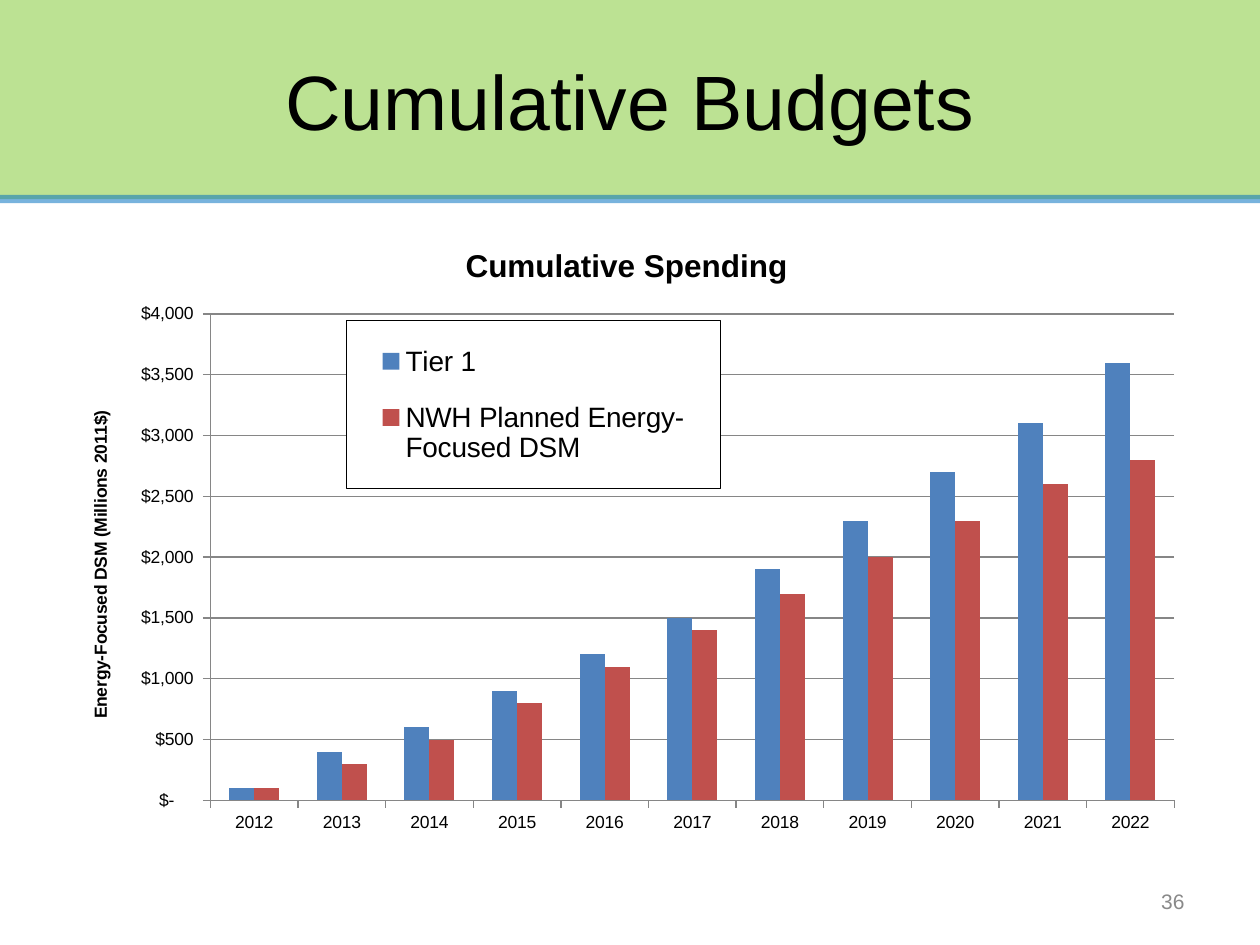
from lxml.etree import SubElement
from pptx import Presentation
from pptx.chart.data import CategoryChartData
from pptx.dml.color import RGBColor
from pptx.enum.chart import XL_CHART_TYPE as ChartType, XL_LEGEND_POSITION as LegendPosition
from pptx.enum.chart import XL_TICK_MARK as TickMark
from pptx.enum.shapes import MSO_CONNECTOR as Connector, MSO_SHAPE as Shape
from pptx.enum.text import MSO_ANCHOR as Anchor, PP_ALIGN as Align
from pptx.oxml import parse_xml
from pptx.oxml.ns import nsdecls, qn
from pptx.util import Inches, Pt

WIDTH, HEIGHT = 10, 7.5
BAND_HEIGHT = 1.58
TITLE = "Cumulative Budgets"
PAGE_NUMBER = "36"
CHART_TITLE = "Cumulative Spending"
AXIS_TITLE = "Energy-Focused DSM (Millions 2011$)"
MONEY = '_("$"* #,##0_);_("$"* \\(#,##0\\);_("$"* "-"??_);_(@_)'
YEARS = [str(year) for year in range(2012, 2023)]
SERIES = [
    ("Tier 1", "4F81BD",
     [100, 400, 600, 900, 1200, 1500, 1900, 2300, 2700, 3100, 3600]),
    ("NWH Planned Energy-Focused DSM", "C0504D",
     [100, 300, 500, 800, 1100, 1400, 1700, 2000, 2300, 2600, 2800]),
]


def color(value):
    return RGBColor.from_string(value)


def style(font, size, value="000000", bold=False):
    font.name = "Arial"
    font.size = Pt(size)
    font.bold = bold
    font.color.rgb = color(value)


def set_alpha(shape, percent):
    fill_color = next(shape._element.spPr.iter(qn("a:srgbClr")))
    SubElement(fill_color, qn("a:alpha"), val=str(percent * 1000))


def write(box, text, size, align, value="000000"):
    frame = box.text_frame
    frame.text = text
    frame.word_wrap = True
    frame.vertical_anchor = Anchor.MIDDLE
    para = frame.paragraphs[0]
    para.alignment = align
    style(para.runs[0].font, size, value)


def place(element, index, x, y, w=None, h=None, inner=False):
    for old in element.findall(qn("c:layout")):
        element.remove(old)
    layout = parse_xml(f"<c:layout {nsdecls('c')}><c:manualLayout/></c:layout>")
    settings = [("layoutTarget", "inner" if inner else None),
                ("xMode", "edge"), ("yMode", "edge"),
                ("x", x), ("y", y), ("w", w), ("h", h)]
    for name, value in settings:
        if value is not None:
            SubElement(layout[0], qn(f"c:{name}"), val=str(value))
    element.insert(index, layout)


def set_title(owner, text, size, x, y):
    owner.has_title = True
    title = owner.chart_title if hasattr(owner, "chart_title") else owner.axis_title
    title.text_frame.text = text
    style(title.text_frame.paragraphs[0].runs[0].font, size, bold=True)
    place(title._element, 1, x, y)


def add_header(page):
    title = page.shapes.title
    title.left, title.top = Inches(0.5), Inches(0.17)
    title.width, title.height = Inches(9), Inches(1.25)
    write(title, TITLE, 44, Align.CENTER)

    band = page.shapes.add_shape(Shape.RECTANGLE, 0, 0, Inches(WIDTH), Inches(BAND_HEIGHT))
    band.shadow.inherit = False
    band.fill.solid()
    band.fill.fore_color.rgb = color("92D050")
    band.line.fill.background()
    set_alpha(band, 61)

    rule = page.shapes.add_connector(
        Connector.STRAIGHT, 0, Inches(BAND_HEIGHT), Inches(WIDTH), Inches(BAND_HEIGHT))
    rule.line.color.rgb = color("0070C0")
    rule.line.width = Pt(4.75)
    set_alpha(rule, 53)
    SubElement(rule._element.spPr, qn("a:effectLst"))

    for shape in (band, rule):
        title._element.addprevious(shape._element)


def add_spending_chart(page):
    data = CategoryChartData(number_format=MONEY)
    data.categories = YEARS
    for name, _, values in SERIES:
        data.add_series(name, values)
    chart = page.shapes.add_chart(
        ChartType.COLUMN_CLUSTERED, Inches(0.5), Inches(1.75), Inches(9), Inches(4.95), data).chart
    style(chart.font, 10)
    set_title(chart, CHART_TITLE, 18, 0.35, 0.03)

    plot = chart.plots[0]
    plot.gap_width = 150
    plot.overlap = 0
    plot.vary_by_categories = False
    for series, (_, fill, _) in zip(plot.series, SERIES):
        series.format.fill.solid()
        series.format.fill.fore_color.rgb = color(fill)

    money_axis = chart.value_axis
    money_axis.minimum_scale, money_axis.maximum_scale = 0, 4000
    money_axis.major_unit = 500
    money_axis.tick_labels.number_format = MONEY
    money_axis.tick_labels.number_format_is_linked = False
    money_axis.has_major_gridlines = True
    set_title(money_axis, AXIS_TITLE, 10, 0.02, 0.3)
    for axis in (chart.category_axis, money_axis):
        axis.major_tick_mark = TickMark.OUTSIDE
    for part in (chart.category_axis, money_axis, money_axis.major_gridlines):
        part.format.line.color.rgb = color("868686")
        part.format.line.width = Pt(0.75)
    place(chart._chartSpace.chart.plotArea, 0, 0.13, 0.15, 0.85, 0.78, inner=True)

    chart.has_legend = True
    legend = chart.legend
    legend.position = LegendPosition.RIGHT
    legend.include_in_layout = True
    style(legend.font, 16)
    place(legend._element, 1, 0.25, 0.16, 0.33, 0.27)
    legend._element.find(qn("c:overlay")).addnext(parse_xml(
        f'<c:spPr {nsdecls("c", "a")}><a:solidFill><a:srgbClr val="FFFFFF"/></a:solidFill>'
        '<a:ln w="9525"><a:solidFill><a:srgbClr val="000000"/></a:solidFill></a:ln></c:spPr>'))


def main():
    deck = Presentation()
    deck.slide_width, deck.slide_height = Inches(WIDTH), Inches(HEIGHT)
    page = deck.slides.add_slide(deck.slide_layouts[5])
    add_header(page)
    add_spending_chart(page)
    number = page.shapes.add_textbox(Inches(7.17), Inches(6.95), Inches(2.33), Inches(0.4))
    write(number, PAGE_NUMBER, 12, Align.RIGHT, "898989")
    deck.save("out.pptx")


if __name__ == "__main__":
    main()
